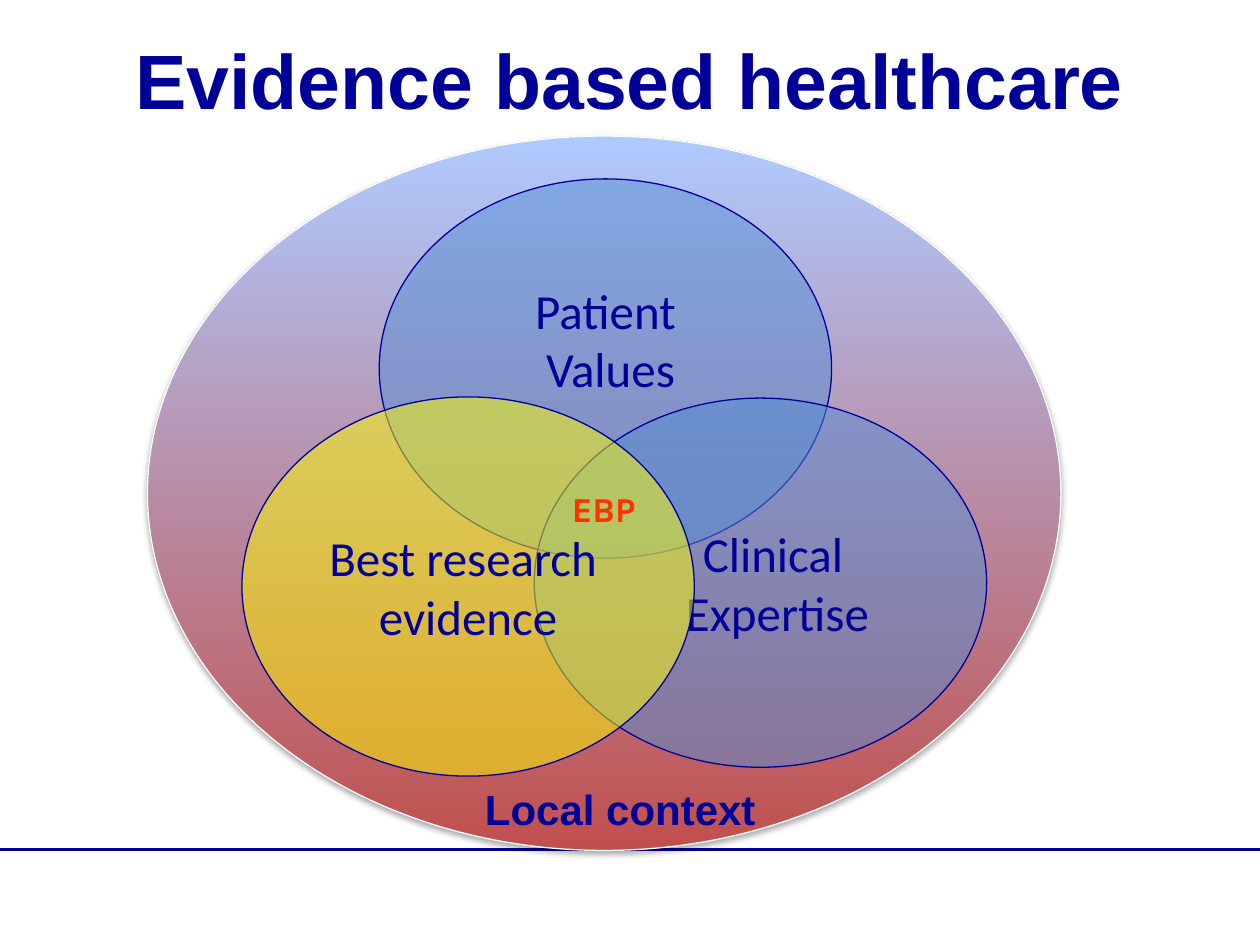
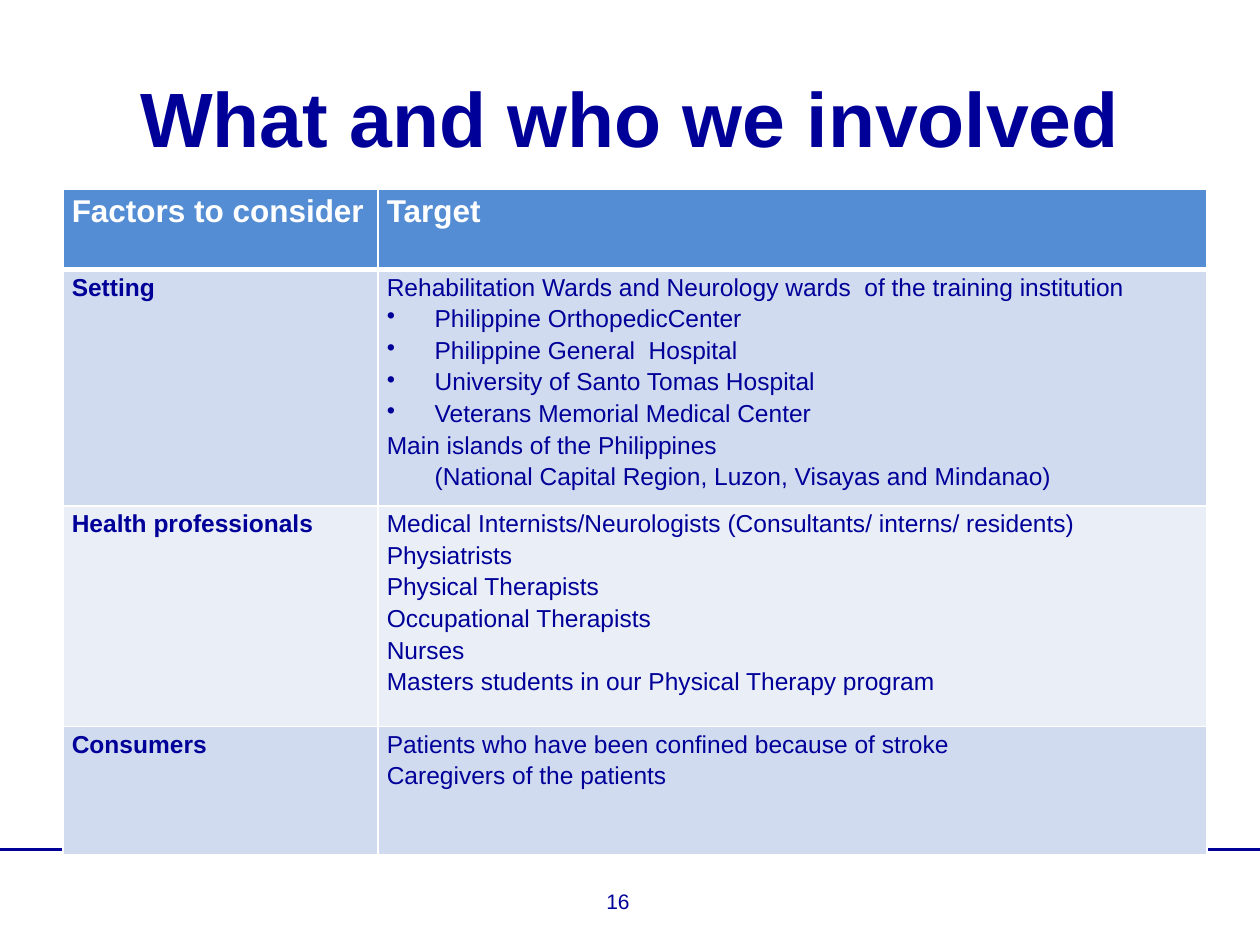
from dataclasses import dataclass

from lxml.etree import SubElement
from pptx import Presentation
from pptx.dml.color import RGBColor
from pptx.enum.shapes import MSO_CONNECTOR, MSO_SHAPE
from pptx.enum.text import MSO_ANCHOR, PP_ALIGN
from pptx.oxml.ns import qn
from pptx.util import Inches, Pt


@dataclass(frozen=True)
class TextStyle:
    size: int
    color: str = "000099"
    font: str = "Arial"
    bold: bool = False


@dataclass(frozen=True)
class Theme:
    # Colours
    navy: str = "000099"
    white: str = "FFFFFF"
    blue: str = "548DD4"
    yellow: str = "FFFF00"
    context_low: str = "C0504D"
    context_high: str = "AFCAFF"
    bands: tuple = ("E9EEF7", "D1DBEF")
    # Text styles
    title: TextStyle = TextStyle(44, bold=True)
    circle: TextStyle = TextStyle(28, font="Calibri")
    context: TextStyle = TextStyle(24, bold=True)
    core: TextStyle = TextStyle(20, color="FF3300", font="Karla", bold=True)
    header: TextStyle = TextStyle(18, color="FFFFFF", bold=True)
    factor: TextStyle = TextStyle(14, bold=True)
    target: TextStyle = TextStyle(14)
    footer: TextStyle = TextStyle(12)


T = Theme()
COLS, ROWS = 100, 75  # layout grid of the slide
WIDTH, HEIGHT = Inches(10), Inches(7.5)
RULE_ROW = 67.4
LIST_INDENT = 3.8
CELL_MARGIN = 0.7
LINE_SPACING = 1.15

# Kinds of line in a table cell: (left indent, first-line indent, bullet)
PLAIN = (0, 0, None)
BULLET = (LIST_INDENT, -LIST_INDENT, "•")
INDENTED = (LIST_INDENT, 0, None)

TABLE_HEADER = ("Factors to consider", "Target")
TARGETS = {
    "Setting": [
        (PLAIN, "Rehabilitation Wards and Neurology wards  of the training institution"),
        (BULLET, "Philippine OrthopedicCenter"),
        (BULLET, "Philippine General  Hospital"),
        (BULLET, "University of Santo Tomas Hospital"),
        (BULLET, "Veterans Memorial Medical Center"),
        (PLAIN, "Main islands of the Philippines"),
        (INDENTED, "(National Capital Region, Luzon, Visayas and Mindanao)"),
    ],
    "Health professionals": [
        (PLAIN, "Medical Internists/Neurologists (Consultants/ interns/ residents)"),
        (PLAIN, "Physiatrists"),
        (PLAIN, "Physical Therapists"),
        (PLAIN, "Occupational Therapists"),
        (PLAIN, "Nurses"),
        (PLAIN, "Masters students in our Physical Therapy program"),
    ],
    "Consumers": [
        (PLAIN, "Patients who have been confined because of stroke"),
        (PLAIN, "Caregivers of the patients"),
    ],
}


# Grid and formatting helpers
def gx(cols):
    return round(WIDTH * cols / COLS)


def gy(rows):
    return round(HEIGHT * rows / ROWS)


def place(left, top, width, height):
    return gx(left), gy(top), gx(width), gy(height)


def rgb(color):
    return RGBColor.from_string(color)


def assign(target, **values):
    for name, value in values.items():
        setattr(target, name, value)


def paint(fill, color):
    fill.solid()
    fill.fore_color.rgb = rgb(color)


def draw_line(line, color, width):
    line.color.rgb = rgb(color)
    line.width = Pt(width)


def add_alpha(color_element, percent):
    SubElement(color_element, qn("a:alpha"), val=str(percent * 1000))


def indent(p, left, first=0):
    pPr = p._p.get_or_add_pPr()
    pPr.set("marL", str(gx(left)))
    pPr.set("indent", str(gx(first)))


def write(p, text, style):
    r = p.add_run()
    r.text = text
    assign(r.font, size=Pt(style.size), name=style.font, bold=style.bold)
    r.font.color.rgb = rgb(style.color)
    # The paragraph end sets the size of the bullet
    SubElement(p._p, qn("a:endParaRPr"), sz=str(style.size * 100))


def paragraphs(tf, count):
    return [tf.paragraphs[0]] + [tf.add_paragraph() for _ in range(count - 1)]


# Elements shared by the slides
def add_text(slide, box, text, style, align=PP_ALIGN.LEFT, left=0):
    tf = slide.shapes.add_textbox(*place(*box)).text_frame
    assign(tf, word_wrap=True, vertical_anchor=MSO_ANCHOR.MIDDLE)
    p = tf.paragraphs[0]
    p.alignment = align
    indent(p, left)
    write(p, text, style)


def add_slide(prs, title, title_box):
    slide = prs.slides.add_slide(prs.slide_layouts[6])
    rule = slide.shapes.add_connector(
        MSO_CONNECTOR.STRAIGHT, 0, gy(RULE_ROW), WIDTH, gy(RULE_ROW))
    draw_line(rule.line, T.navy, 1.75)
    SubElement(rule._element.spPr, qn("a:effectLst"))
    add_text(slide, title_box, title, T.title, PP_ALIGN.CENTER)
    return slide


# Venn diagram
def add_ellipse(slide, box, outline):
    sp = slide.shapes.add_shape(MSO_SHAPE.OVAL, *place(*box))
    sp.shadow.inherit = False
    draw_line(sp.line, outline, 0.75)
    return sp


def add_context(slide, box):
    """Large ellipse with a vertical gradient and a soft shadow below."""
    sp = add_ellipse(slide, box, T.white)
    sp.fill.gradient()
    sp.fill.gradient_angle = 90
    for stop, color in zip(sp.fill.gradient_stops, (T.context_low, T.context_high)):
        stop.color.rgb = rgb(color)
    effects = sp._element.spPr.find(qn("a:effectLst"))
    shadow = SubElement(effects, qn("a:outerShdw"), blurRad=str(Pt(3.1)),
                        dist=str(Pt(1.8)), dir="5400000", rotWithShape="0")
    add_alpha(SubElement(shadow, qn("a:srgbClr"), val="000000"), 35)


def add_circle(slide, box, color, lines, lift=0, shift=0):
    """Half-transparent circle with (text, left indent) lines.

    lift and shift enlarge the bottom and right margins of the text.
    """
    sp = add_ellipse(slide, box, T.navy)
    paint(sp.fill, color)
    add_alpha(sp._element.spPr.find(qn("a:solidFill"))[0], 50)
    tf = sp.text_frame
    assign(tf, word_wrap=True, vertical_anchor=MSO_ANCHOR.MIDDLE,
           margin_left=0, margin_right=gx(shift),
           margin_bottom=tf.margin_top + gy(lift))
    for p, (text, left) in zip(paragraphs(tf, len(lines)), lines):
        p.alignment = PP_ALIGN.CENTER
        indent(p, left)
        write(p, text, T.circle)


# Table
def set_borders(cell, bottom):
    tcPr = cell._tc.get_or_add_tcPr()
    for side, width in dict(L=1, R=1, T=1, B=bottom).items():
        ln = SubElement(tcPr, qn(f"a:ln{side}"), w=str(Pt(width)))
        SubElement(SubElement(ln, qn("a:solidFill")), qn("a:srgbClr"), val=T.white)


def fill_cell(cell, lines, style, color, bottom=1):
    set_borders(cell, bottom)
    paint(cell.fill, color)
    assign(cell, margin_left=gx(CELL_MARGIN), margin_right=gx(CELL_MARGIN),
           margin_top=0, margin_bottom=0)
    for p, (kind, text) in zip(paragraphs(cell.text_frame, len(lines)), lines):
        left, first, bullet = kind
        indent(p, left, first)
        if bullet:
            SubElement(p._p.get_or_add_pPr(), qn("a:buChar"), char=bullet)
        p.line_spacing = LINE_SPACING
        write(p, text, style)


def add_target_table(slide, left, top, widths, heights):
    box = place(left, top, sum(widths), sum(heights))
    table = slide.shapes.add_table(len(heights), len(widths), *box).table
    assign(table, first_row=False, horz_banding=False)
    for column, width in zip(table.columns, widths):
        column.width = gx(width)
    for row, height in zip(table.rows, heights):
        row.height = gy(height)

    for c, heading in enumerate(TABLE_HEADER):
        fill_cell(table.cell(0, c), [(PLAIN, heading)], T.header, T.blue, bottom=3)
    for n, (factor, targets) in enumerate(TARGETS.items(), start=1):
        band = T.bands[n % 2]
        fill_cell(table.cell(n, 0), [(PLAIN, factor)], T.factor, band)
        fill_cell(table.cell(n, 1), targets, T.target, band)


# Slides
def build_venn_slide(prs):
    slide = add_slide(prs, "Evidence based healthcare", (5, 0, 90, 12.5))
    add_context(slide, (11.7, 10.8, 72.5, 56.7))
    add_circle(slide, (30.1, 14.2, 35.9, 30.1), T.blue,
               [("Patient", 0), ("Values", 0.8)], lift=4.7)
    add_circle(slide, (42.4, 31.6, 35.9, 29.3), T.blue,
               [("Clinical", 2), ("Expertise", 2.7)])
    add_circle(slide, (19.2, 31.5, 35.9, 30.1), T.yellow,
               [("Best research", 0), ("evidence", 0.8)], shift=0.8)
    add_text(slide, (40.8, 38.3, 12.1, 4.1), "EBP", T.core, left=3.6)
    add_text(slide, (37.5, 61.7, 24.2, 5), "Local context", T.context)


def build_target_slide(prs):
    slide = add_slide(prs, "What and who we involved", (1.7, 3, 96.7, 12.5))
    add_target_table(slide, 5, 15, widths=(25, 65.8), heights=(6.4, 17.5, 17.5, 10.2))
    add_text(slide, (37.4, 69.5, 23.3, 4), "16", T.footer, PP_ALIGN.CENTER)


def main():
    prs = Presentation()
    assign(prs, slide_width=WIDTH, slide_height=HEIGHT)
    build_venn_slide(prs)
    build_target_slide(prs)
    prs.save("out.pptx")


if __name__ == "__main__":
    main()
